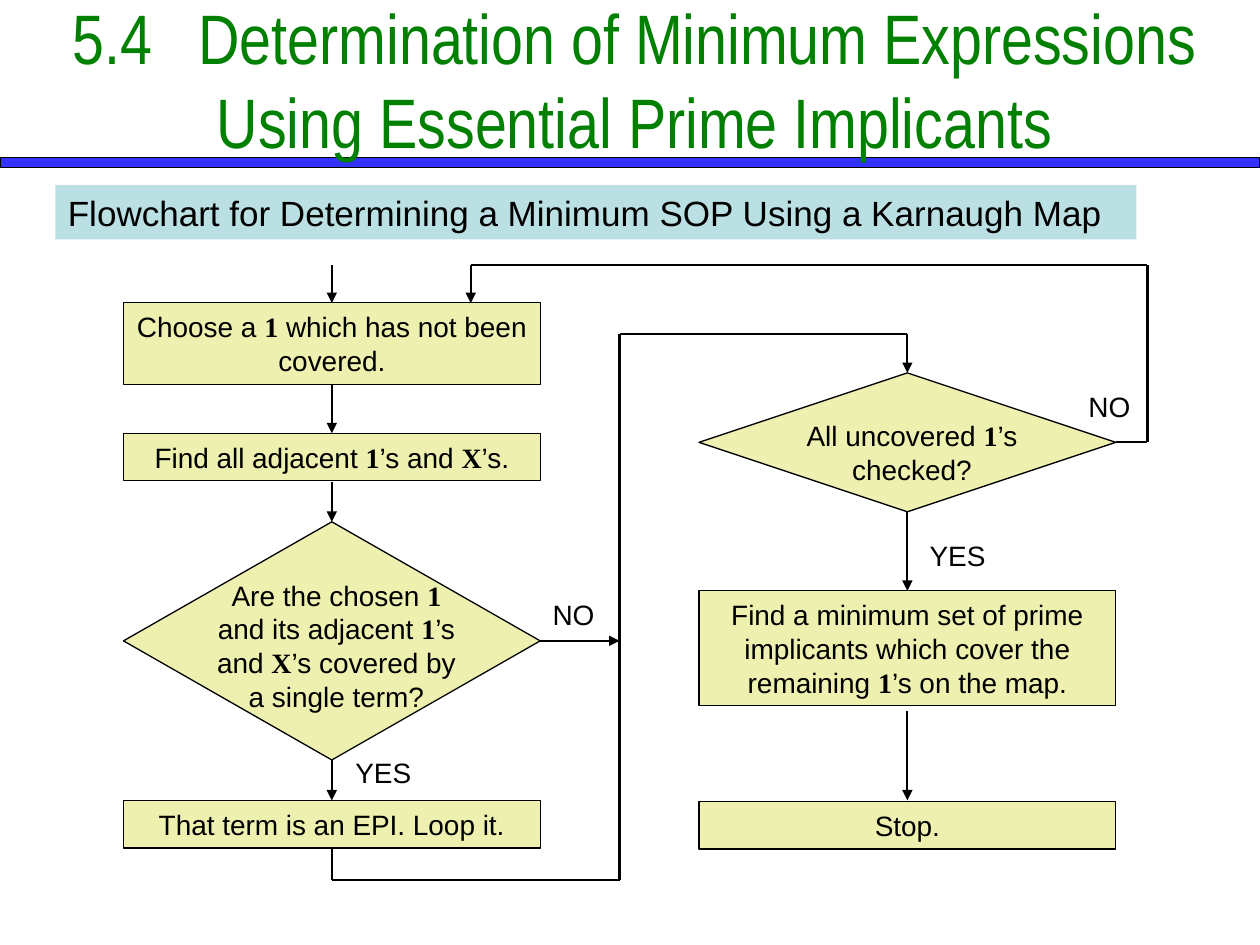
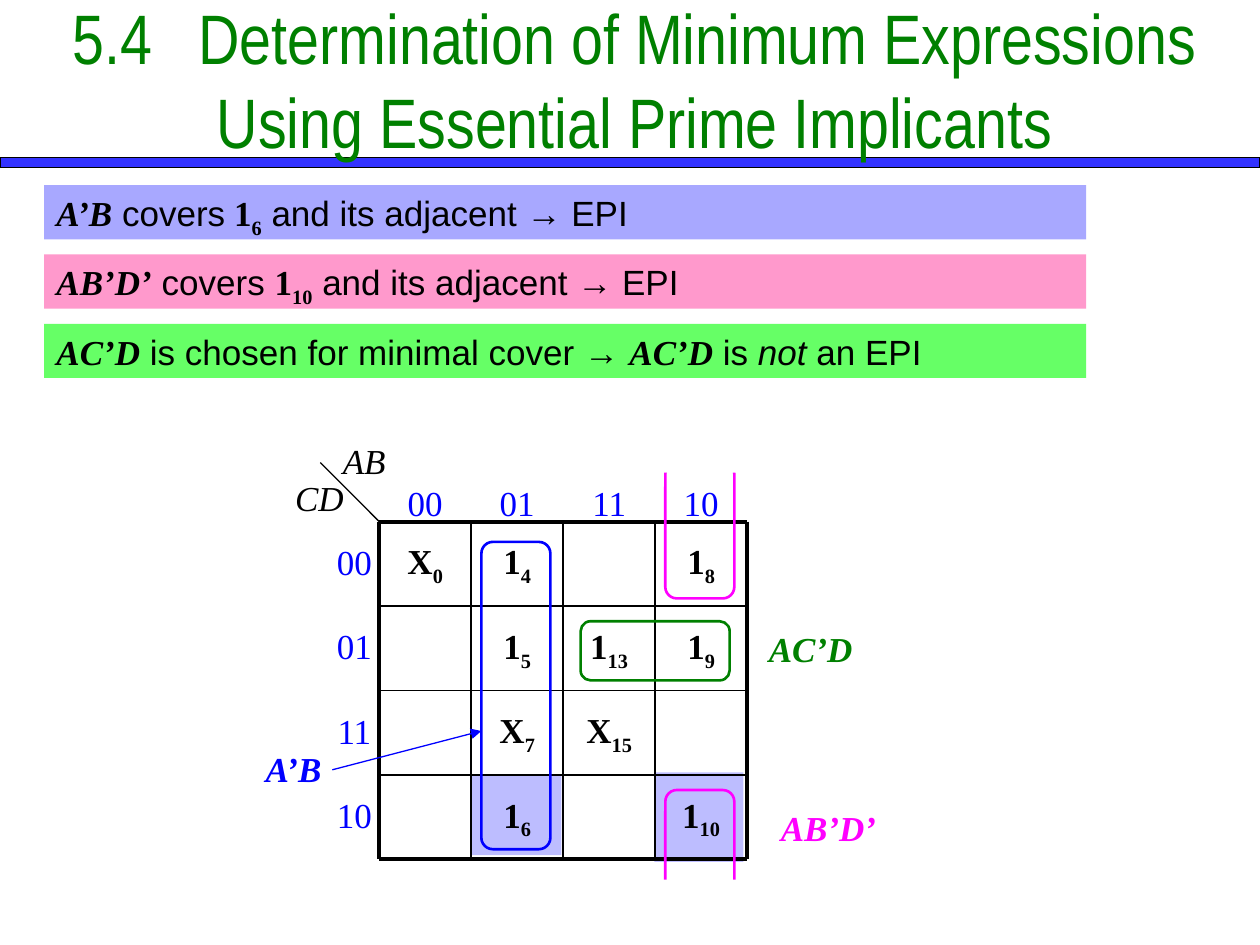
from dataclasses import dataclass
from itertools import pairwise

from lxml import etree
from pptx import Presentation
from pptx.dml.color import RGBColor
from pptx.enum import shapes, text
from pptx.oxml.ns import qn
from pptx.util import Inches, Pt

BLACK = RGBColor(0x00, 0x00, 0x00)
WHITE = RGBColor(0xFF, 0xFF, 0xFF)
GREEN = RGBColor(0x00, 0x80, 0x00)
BLUE = RGBColor(0x00, 0x00, 0xFF)
MAGENTA = RGBColor(0xFF, 0x00, 0xFF)
BAND_BLUE = RGBColor(0x33, 0x33, 0xFF)
PALE_TEAL = RGBColor(0xBB, 0xE0, 0xE3)
STEP_YELLOW = RGBColor(0xED, 0xF0, 0xAE)
PINK = RGBColor(0xFF, 0x99, 0xCC)
LIME = RGBColor(0x66, 0xFF, 0x66)

RECT = shapes.MSO_SHAPE.RECTANGLE
ROUNDED = shapes.MSO_SHAPE.ROUNDED_RECTANGLE
DECISION = shapes.MSO_SHAPE.FLOWCHART_DECISION
LEFT, CENTER = text.PP_ALIGN.LEFT, text.PP_ALIGN.CENTER
TOP, MIDDLE = text.MSO_ANCHOR.TOP, text.MSO_ANCHOR.MIDDLE


@dataclass(frozen=True)
class Face:
    font: str
    bold: bool = False
    italic: bool = False
    subscript: bool = False


TITLE = Face("Arial Narrow")
SANS = Face("Arial")
SANS_ITALIC = Face("Arial", italic=True)
DIGITS = Face("Times New Roman")
VARIABLE = Face("Times New Roman", italic=True)
SYMBOL = Face("Times New Roman", bold=True)
INDEX = Face("Times New Roman", bold=True, subscript=True)
TERM = Face("Times New Roman", bold=True, italic=True)


@dataclass(frozen=True)
class Grid:
    """A region of a slide, measured in columns and rows from its corner."""
    left: float
    top: float
    column: float
    row: float

    def point(self, x, y):
        return Inches(self.left + x * self.column), Inches(self.top + y * self.row)

    def box(self, x, y, width, height):
        return (*self.point(x, y), Inches(width * self.column), Inches(height * self.row))


PAGE = Grid(0, 0, 1, 1)
FLOW = Grid(0.98, 2.1, 0.315, 0.315)
KMAP = Grid(3.01, 4.14, 0.73, 0.67)


def write(frame, pieces, size, color=BLACK, align=LEFT, anchor=MIDDLE):
    """Fill a frame with (words, face) pieces; None breaks the line."""
    frame.word_wrap = True
    frame.vertical_anchor = anchor
    paragraph = frame.paragraphs[0]
    paragraph.alignment = align
    for piece in pieces:
        if piece is None:
            paragraph.add_line_break()
            continue
        words, face = piece
        run = paragraph.add_run()
        run.text = words
        run.font.name, run.font.size = face.font, Pt(size)
        run.font.bold, run.font.italic = face.bold, face.italic
        run.font.color.rgb = color
        if face.subscript:
            run.font._element.set("baseline", "-25000")


def add_label(slide, box, pieces, size, color=BLACK, align=LEFT):
    write(slide.shapes.add_textbox(*box).text_frame, pieces, size, color, align)


def add_figure(slide, kind, box, fill=None, line=None, width=0.75, opacity=100):
    figure = slide.shapes.add_shape(kind, *box)
    figure.shadow.inherit = False
    if fill is None:
        figure.fill.background()
    else:
        figure.fill.solid()
        figure.fill.fore_color.rgb = fill
    if opacity < 100:
        tint = figure._element.spPr.find(qn("a:solidFill"))[0]
        etree.SubElement(tint, qn("a:alpha"), val=str(opacity * 1000))
    if line is None:
        figure.line.fill.background()
    else:
        figure.line.color.rgb = line
        figure.line.width = Pt(width)
    return figure


def add_route(slide, points, color=BLACK, width=1.25, arrow=True):
    """Join points by straight connectors, with an arrowhead at the last one."""
    for start, end in pairwise(points):
        leg = slide.shapes.add_connector(shapes.MSO_CONNECTOR.STRAIGHT, *start, *end)
        leg.line.color.rgb = color
        leg.line.width = Pt(width)
        if arrow and end == points[-1]:
            etree.SubElement(leg.line._get_or_add_ln(), qn("a:tailEnd"), type="triangle")
        etree.SubElement(leg._element.spPr, qn("a:effectLst"))


def add_bar(slide, box, pieces, fill, opacity=100):
    bar = add_figure(slide, RECT, box, fill, opacity=opacity)
    write(bar.text_frame, pieces, 20, anchor=TOP)


def start_slide(deck):
    """Add a slide with the shared band and section title."""
    slide = deck.slides.add_slide(deck.slide_layouts[6])
    add_figure(slide, RECT, PAGE.box(0, 1.25, 10, 0.08), BAND_BLUE, BLACK)
    heading = [("5.4\tDetermination of Minimum Expressions", TITLE), None,
               ("Using Essential Prime Implicants", TITLE)]
    add_label(slide, PAGE.box(0.42, 0, 9.23, 1.25), heading, 40, GREEN, CENTER)
    return slide


def draw_flowchart(slide, grid):
    step_width, right = 10.5, 14.5
    left_axis, right_axis = step_width / 2, right + step_width / 2
    merge, loop_back, reentry = 12.5, 25.8, 8.75

    steps = [
        (0, 0.95, 2.07, [("Choose a ", SANS), ("1", SYMBOL),
                         (" which has not been covered.", SANS)]),
        (0, 4.25, 1.2, [("Find all adjacent ", SANS), ("1", SYMBOL), ("’s and ", SANS),
                        ("X", SYMBOL), ("’s.", SANS)]),
        (0, 13.5, 1.2, [("That term is an EPI. Loop it.", SANS)]),
        (right, 8.22, 2.9, [("Find a minimum set of prime implicants which cover the remaining ", SANS),
                            ("1", SYMBOL), ("’s on the map.", SANS)]),
        (right, 13.53, 1.2, [("Stop.", SANS)]),
    ]
    for x, y, height, words in steps:
        step = add_figure(slide, RECT, grid.box(x, y, step_width, height), STEP_YELLOW, BLACK)
        write(step.text_frame, words, 16, align=CENTER)

    # Each decision: column, row, height, row and height of its question.
    decisions = [
        (0, 6.48, 6, 7.75, 3.7, [
            ("Are the chosen ", SANS), ("1 ", SYMBOL), ("and its adjacent ", SANS),
            ("1", SYMBOL), ("’s and ", SANS), ("X", SYMBOL),
            ("’s covered by a single term?", SANS)]),
        (right, 2.73, 3.5, 3.72, 2.03, [
            ("All uncovered ", SANS), ("1", SYMBOL), ("’s checked?", SANS)]),
    ]
    for x, y, height, question_y, question_height, words in decisions:
        add_figure(slide, DECISION, grid.box(x, y, step_width, height), STEP_YELLOW, BLACK)
        add_label(slide, grid.box(x + 2, question_y, 6.73, question_height),
                  words, 16, align=CENTER)

    routes = [
        [(left_axis, 0), (left_axis, 0.97)],
        [(left_axis, 3), (left_axis, 4.25)],
        [(left_axis, 5.48), (left_axis, 6.48)],
        [(left_axis, 12.48), (left_axis, 13.5)],
        [(right_axis, 6.23), (right_axis, 8.22)],
        [(right_axis, 11.25), (right_axis, 13.5)],
        [(step_width, 9.48), (merge, 9.48)],
        [(left_axis, 14.7), (left_axis, 15.5), (merge, 15.5), (merge, 1.75),
         (right_axis, 1.75), (right_axis, 2.73)],
        [(right + step_width, 4.48), (loop_back, 4.48), (loop_back, 0),
         (reentry, 0), (reentry, 0.97)],
    ]
    for route in routes:
        add_route(slide, [grid.point(*stop) for stop in route])

    answers = [("YES", 5.53, 12.22), ("NO", 10.5, 8.22), ("YES", 20, 6.73), ("NO", 24, 2.98)]
    for answer, x, y in answers:
        add_label(slide, grid.box(x, y, 2.4, 1.17), [(answer, SANS)], 16)


def draw_findings(slide):
    findings = [
        (BLUE, 34, [("A’B", TERM), (" covers", SANS), (" 1", SYMBOL), ("6", INDEX),
                    (" and its adjacent → EPI", SANS)]),
        (PINK, 100, [("AB’D’", TERM), (" covers ", SANS), ("1", SYMBOL), ("10", INDEX),
                     (" and its adjacent → EPI", SANS)]),
        (LIME, 100, [("AC’D", TERM), (" is chosen for minimal cover → ", SANS), ("AC’D", TERM),
                     (" is ", SANS), ("not", SANS_ITALIC), (" an EPI", SANS)]),
    ]
    for place, (fill, opacity, words) in enumerate(findings):
        add_bar(slide, PAGE.box(0.35, 1.47 + 0.55 * place, 8.27, 0.43), words, fill, opacity)


def draw_map_cells(slide, grid):
    codes = ["00", "01", "11", "10"]
    minterms = [
        ["X 0", "1 4", "", "1 8"],
        ["", "1 5", "1 13", "1 9"],
        ["", "X 7", "X 15", ""],
        ["", "1 6", "", "1 10"],
    ]
    add_figure(slide, RECT, grid.box(1.01, 3.01, 0.97, 0.94), BLUE, opacity=26)
    add_figure(slide, RECT, grid.box(2.99, 2.97, 0.97, 1.06), BLUE, opacity=26)

    for y, row in enumerate(minterms):
        for x, minterm in enumerate(row):
            if minterm:
                value, index = minterm.split()
                add_label(slide, grid.box(x, y, 1, 1), [(value, SYMBOL), (index, INDEX)],
                          20, align=CENTER)

    for place in range(5):
        width = 2.25 if place in (0, 4) else 1
        for ends in ([(0, place), (4, place)], [(place, 0), (place, 4)]):
            add_route(slide, [grid.point(*end) for end in ends], width=width, arrow=False)

    add_route(slide, [grid.point(0, 0), grid.point(-0.64, -0.7)], width=0.75, arrow=False)
    for variables, x, y in (("AB", -0.53, -1.04), ("CD", -1.05, -0.61)):
        add_label(slide, grid.box(x, y, 1, 0.64), [(variables, VARIABLE)], 20)
    for place, code in enumerate(codes):
        for x, y in ((place, -0.73), (-0.77, place - 0.03)):
            add_label(slide, grid.box(x, y, 1, 1), [(code, DIGITS)], 20, BLUE, CENTER)


def draw_map_loops(slide, grid):
    loops = [
        (BLUE, 1.11, 0.24, 0.75, 3.64),
        (MAGENTA, 3.11, -0.7, 0.75, 1.61),
        (MAGENTA, 3.11, 3.18, 0.75, 1.28),
        (GREEN, 2.19, 1.18, 1.62, 0.7),
    ]
    for color, *box in loops:
        add_figure(slide, ROUNDED, grid.box(*box), line=color, width=1.5)
    # White covers leave the wrap-around loop open at its outer ends.
    for x, y in ((2.95, -0.94), (3.05, 4.24)):
        add_figure(slide, RECT, grid.box(x, y, 1.08, 0.36), WHITE)

    add_route(slide, [grid.point(-0.51, 2.94), grid.point(1.11, 2.48)], BLUE, 0.75)
    terms = [("A’B", BLUE, -1.37, 2.6), ("AB’D’", MAGENTA, 4.23, 3.3),
             ("AC’D", GREEN, 4.1, 1.18)]
    for term, color, x, y in terms:
        add_label(slide, grid.box(x, y, 1.6, 0.64), [(term, TERM)], 20, color)


def main():
    deck = Presentation()
    deck.slide_width, deck.slide_height = Inches(10), Inches(7.5)

    flowchart = start_slide(deck)
    caption = "Flowchart for Determining a Minimum SOP Using a Karnaugh Map"
    add_bar(flowchart, PAGE.box(0.44, 1.47, 8.58, 0.43), [(caption, SANS)], PALE_TEAL)
    draw_flowchart(flowchart, FLOW)

    karnaugh = start_slide(deck)
    draw_findings(karnaugh)
    draw_map_cells(karnaugh, KMAP)
    draw_map_loops(karnaugh, KMAP)

    deck.save("out.pptx")


if __name__ == "__main__":
    main()
